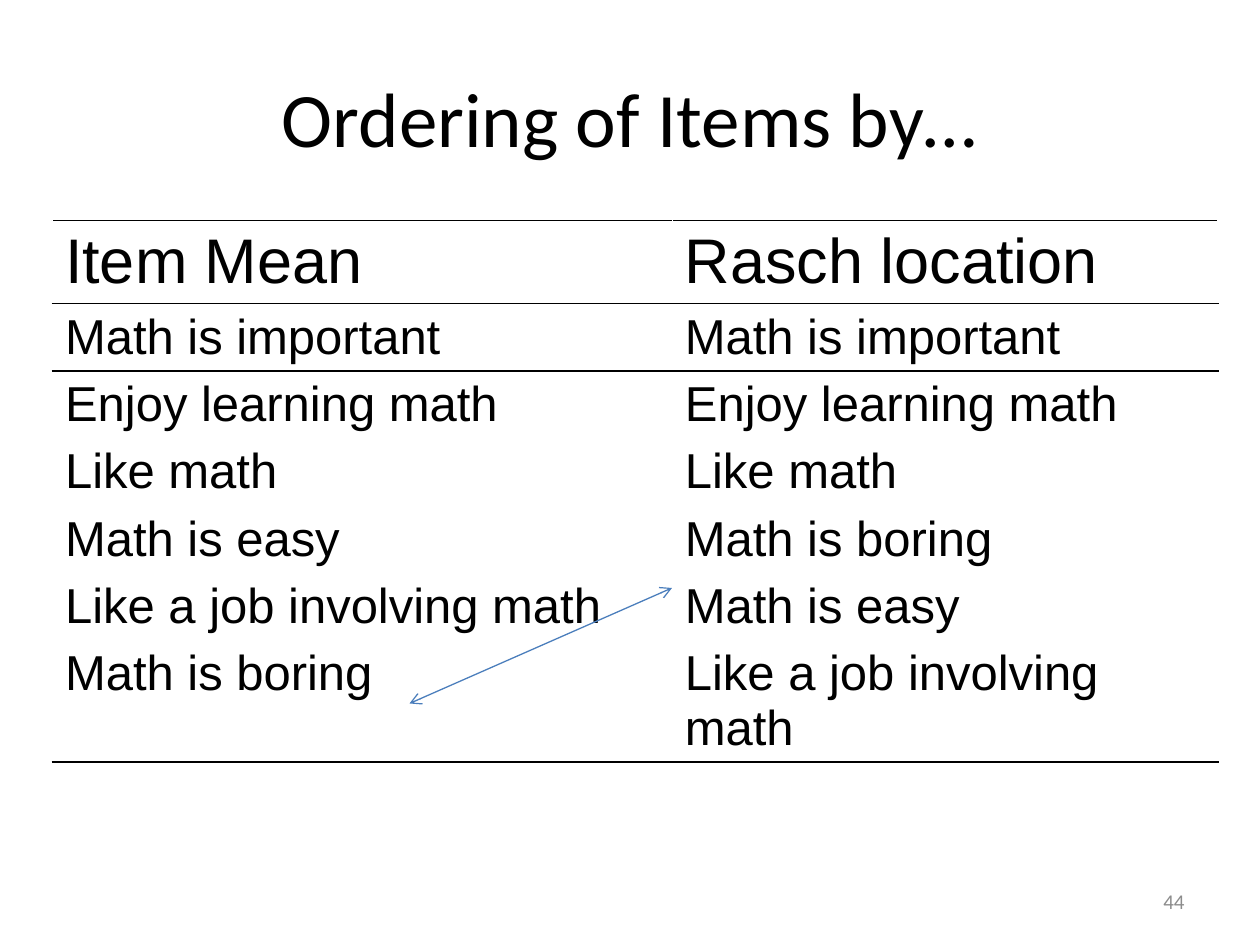
from lxml import etree
from pptx import Presentation
from pptx.dml.color import RGBColor
from pptx.enum import shapes, text
from pptx.oxml import ns
from pptx.util import Pt

COLORS = {"text": "000000", "rule": "000000", "number": "8C8C8C", "arrow": "4B7EBC"}

ROWS = [
    ("Item Mean", "Rasch location"),
    ("Math is important", "Math is important"),
    ("Enjoy learning math", "Enjoy learning math"),
    ("Like math", "Like math"),
    ("Math is easy", "Math is boring"),
    ("Like a job involving math", "Math is easy"),
    ("Math is boring", "Like a job involving math"),
]
RULES = {0, 1, 2, len(ROWS)}  # row boundaries that carry a line


def color(name):
    return RGBColor.from_string(COLORS[name])


def format_paragraph(paragraph, font_name, size, color_name, alignment):
    paragraph.alignment = alignment
    paragraph.font.name = font_name
    paragraph.font.size = Pt(size)
    paragraph.font.color.rgb = color(color_name)


def place(shape, left, top, width, height):
    shape.left, shape.top = Pt(left), Pt(top)
    shape.width, shape.height = Pt(width), Pt(height)


def add_title(slide, left, top, width, height):
    title = slide.shapes.title
    place(title, left, top, width, height)
    frame = title.text_frame
    frame.text = "Ordering of Items by…"
    frame.vertical_anchor = text.MSO_ANCHOR.MIDDLE
    format_paragraph(frame.paragraphs[0], "Calibri", 44, "text", text.PP_ALIGN.CENTER)


def add_border(cell, side):
    properties = cell._tc.get_or_add_tcPr()
    line = etree.SubElement(properties, ns.qn(f"a:ln{side}"), w=str(Pt(1)))
    fill = etree.SubElement(line, ns.qn("a:solidFill"))
    etree.SubElement(fill, ns.qn("a:srgbClr"), val=COLORS["rule"])


def add_item_table(slide, left, top, width, height):
    frame = slide.shapes.add_table(
        len(ROWS), 2, Pt(left), Pt(top), Pt(width), Pt(height))
    table = frame.table
    table.first_row = table.horz_banding = False
    first_width = 354.2
    table.columns[0].width = Pt(first_width)
    table.columns[1].width = Pt(width - first_width)
    for row, items in enumerate(ROWS):
        for column, item in enumerate(items):
            cell = table.cell(row, column)
            cell.text = item
            format_paragraph(cell.text_frame.paragraphs[0], "Arial",
                             36 if row == 0 else 28, "text", text.PP_ALIGN.LEFT)
            for side, boundary in (("T", row), ("B", row + 1)):
                if boundary in RULES:
                    add_border(cell, side)
            cell.fill.background()


def add_slide_number(slide, left, top, width, height):
    box = slide.shapes.add_textbox(Pt(left), Pt(top), Pt(width), Pt(height))
    frame = box.text_frame
    frame.word_wrap = True
    frame.vertical_anchor = text.MSO_ANCHOR.MIDDLE
    frame.text = "44"
    format_paragraph(frame.paragraphs[0], "Calibri", 12, "number", text.PP_ALIGN.RIGHT)


def add_swap_arrow(slide, left, top, width, height):
    arrow = slide.shapes.add_connector(
        shapes.MSO_CONNECTOR.STRAIGHT,
        Pt(left), Pt(top + height), Pt(left + width), Pt(top))
    arrow.line.color.rgb = color("arrow")
    arrow.line.width = Pt(0.75)
    line = arrow.line._get_or_add_ln()
    for end in ("headEnd", "tailEnd"):
        etree.SubElement(line, ns.qn(f"a:{end}"), type="arrow")
    etree.SubElement(arrow._element.spPr, ns.qn("a:effectLst"))


def main():
    presentation = Presentation()
    presentation.slide_width, presentation.slide_height = Pt(720), Pt(540)
    slide = presentation.slides.add_slide(presentation.slide_layouts[5])

    # Heading
    add_title(slide, 36, 21.6, 648, 90)
    # Two orderings side by side
    add_item_table(slide, 30, 126, 666, 206.5)
    # Page number
    add_slide_number(slide, 516, 500.5, 168, 28.75)
    # Item that changes place
    add_swap_arrow(slide, 234, 336, 150, 66)

    presentation.save("out.pptx")


if __name__ == "__main__":
    main()
